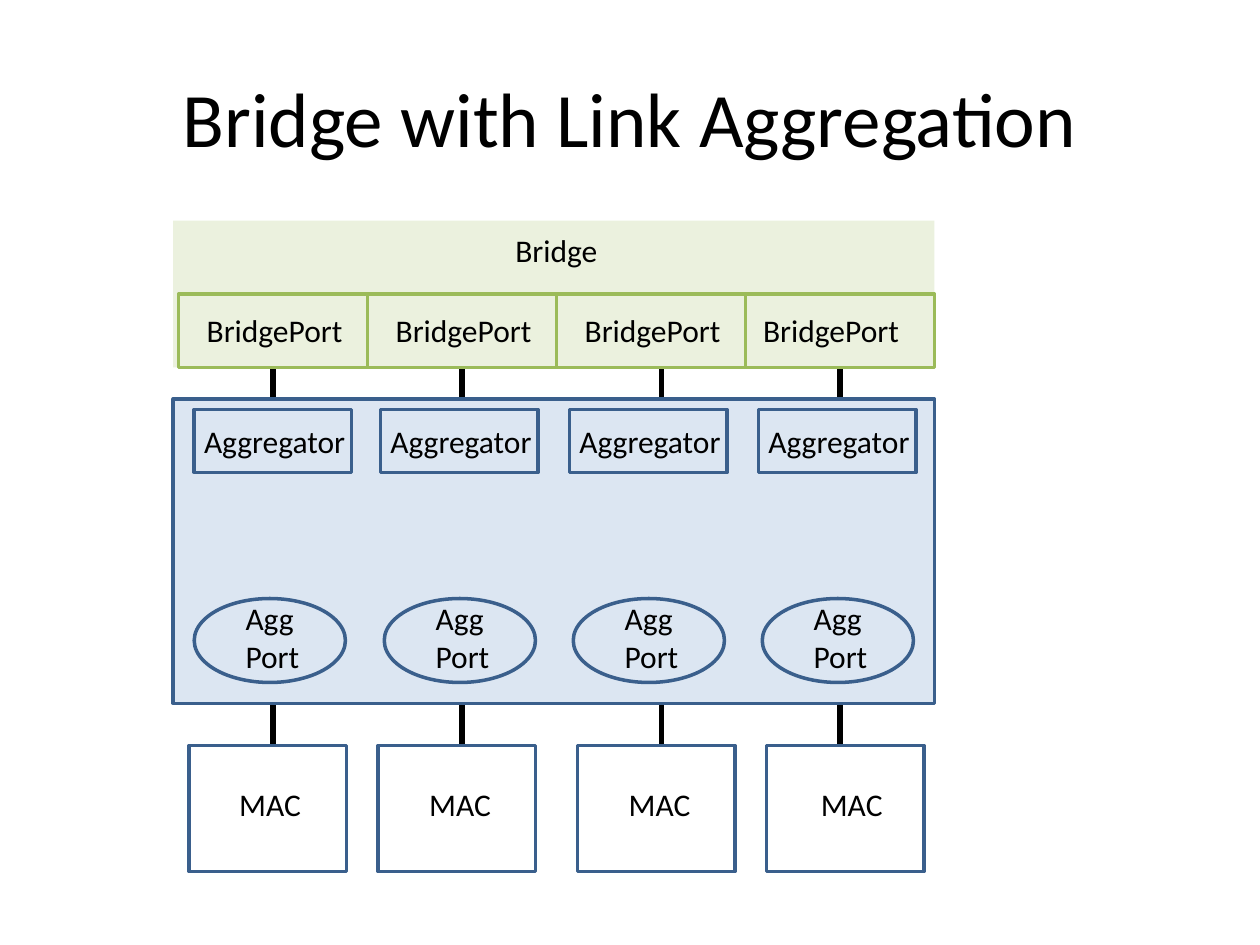
import dataclasses

import pptx
import pptx.dml.color
import pptx.enum.shapes
import pptx.enum.text
import pptx.oxml.ns
import pptx.util
from lxml import etree

SHAPE = pptx.enum.shapes.MSO_SHAPE
ALIGN = pptx.enum.text.PP_ALIGN
CELL = 1 / 12  # grid cell in inches: the slide is 120 columns by 90 rows


@dataclasses.dataclass(frozen=True)
class Theme:
    font: str = "Calibri"
    title_size: int = 44
    label_size: int = 18
    border: float = 2
    link: float = 3
    ink: str = "000000"
    bridge_fill: str = "EBF1DE"
    bridge_line: str = "9BBB59"
    agg_fill: str = "DCE6F2"
    agg_line: str = "3A5F8C"


def cells(*counts):
    return [pptx.util.Inches(count * CELL) for count in counts]


def rgb(value):
    return pptx.dml.color.RGBColor.from_string(value)


def write(frame, text, *, size, font, color, align=ALIGN.LEFT,
          anchor=pptx.enum.text.MSO_ANCHOR.TOP):
    frame.text = text
    frame.vertical_anchor = anchor
    for paragraph in frame.paragraphs:
        paragraph.alignment = align
        paragraph.font.size = pptx.util.Pt(size)
        paragraph.font.name = font
        paragraph.font.color.rgb = rgb(color)


class Diagram:
    def __init__(self, slide, theme):
        self.slide, self.theme = slide, theme

    def title(self, text, *box):
        heading = self.slide.shapes.title
        heading.left, heading.top, heading.width, heading.height = cells(*box)
        write(heading.text_frame, text, size=self.theme.title_size,
              font=self.theme.font, color=self.theme.ink, align=ALIGN.CENTER,
              anchor=pptx.enum.text.MSO_ANCHOR.MIDDLE)

    def block(self, *box, kind=SHAPE.RECTANGLE, fill=None, line=None):
        block = self.slide.shapes.add_shape(kind, *cells(*box))
        block.shadow.inherit = False
        if fill:
            block.fill.solid()
            block.fill.fore_color.rgb = rgb(fill)
        else:
            block.fill.background()
        if line:
            block.line.color.rgb = rgb(line)
            block.line.width = pptx.util.Pt(self.theme.border)
        else:
            block.line.fill.background()

    def label(self, text, *box):
        frame = self.slide.shapes.add_textbox(*cells(*box)).text_frame
        frame.word_wrap = False
        frame.auto_size = pptx.enum.text.MSO_AUTO_SIZE.SHAPE_TO_FIT_TEXT
        write(frame, text, size=self.theme.label_size,
              font=self.theme.font, color=self.theme.ink)

    def link(self, column, top, bottom):
        link = self.slide.shapes.add_connector(
            pptx.enum.shapes.MSO_CONNECTOR.STRAIGHT,
            *cells(column, top, column, bottom))
        link.line.color.rgb = rgb(self.theme.ink)
        link.line.width = pptx.util.Pt(self.theme.link)
        etree.SubElement(link._element.spPr, pptx.oxml.ns.qn("a:effectLst"))

    def row(self, text, lefts, top, width, height, label_lefts, label_top,
            label_width, label_height=4.8, **style):
        for left, label_left in zip(lefts, label_lefts):
            self.block(left, top, width, height, **style)
            self.label(text, label_left, label_top, label_width, label_height)


def main():
    deck = pptx.Presentation()
    deck.slide_width, deck.slide_height = cells(120, 90)
    theme = Theme()
    diagram = Diagram(deck.slides.add_slide(deck.slide_layouts[5]), theme)
    diagram.title("Bridge with Link Aggregation", 6, 3.6, 108, 15)

    # Links run behind the layers, from the bridge ports to the MACs
    for column in (26, 44, 63, 80):
        diagram.link(column, 35, 71)

    # Link aggregation and bridge layers
    diagram.block(16.5, 38, 72.5, 29, fill=theme.agg_fill, line=theme.agg_line)
    diagram.block(16.5, 21, 72.5, 14, fill=theme.bridge_fill)
    diagram.label("Bridge", 47.9, 21.4, 10.3, 4.8)

    # Bridge ports
    diagram.row("BridgePort", range(17, 89, 18), 28, 18, 7,
                (18.5, 36.5, 54.5, 71.5), 29, 15.5, line=theme.bridge_line)

    # Aggregators
    aggregators = (18.5, 36.25, 54.25, 72.25)
    diagram.row("Aggregator", aggregators, 39, 15, 6,
                [left - 0.25 for left in aggregators], 39.6, 16,
                line=theme.agg_line)

    # Aggregation ports
    agg_ports = (18.5, 36.6, 54.6, 72.6)
    diagram.row("Agg\nPort", agg_ports, 57, 14.4, 8,
                [left + 3.7 for left in agg_ports], 56.5, 7.6, 8.5,
                kind=SHAPE.OVAL, line=theme.agg_line)

    # MACs
    diagram.row("MAC", (18, 36, 55, 73), 71, 15, 12,
                (21.6, 39.7, 58.7, 77), 74.2, 8.4, line=theme.agg_line)

    deck.save("out.pptx")


if __name__ == "__main__":
    main()
